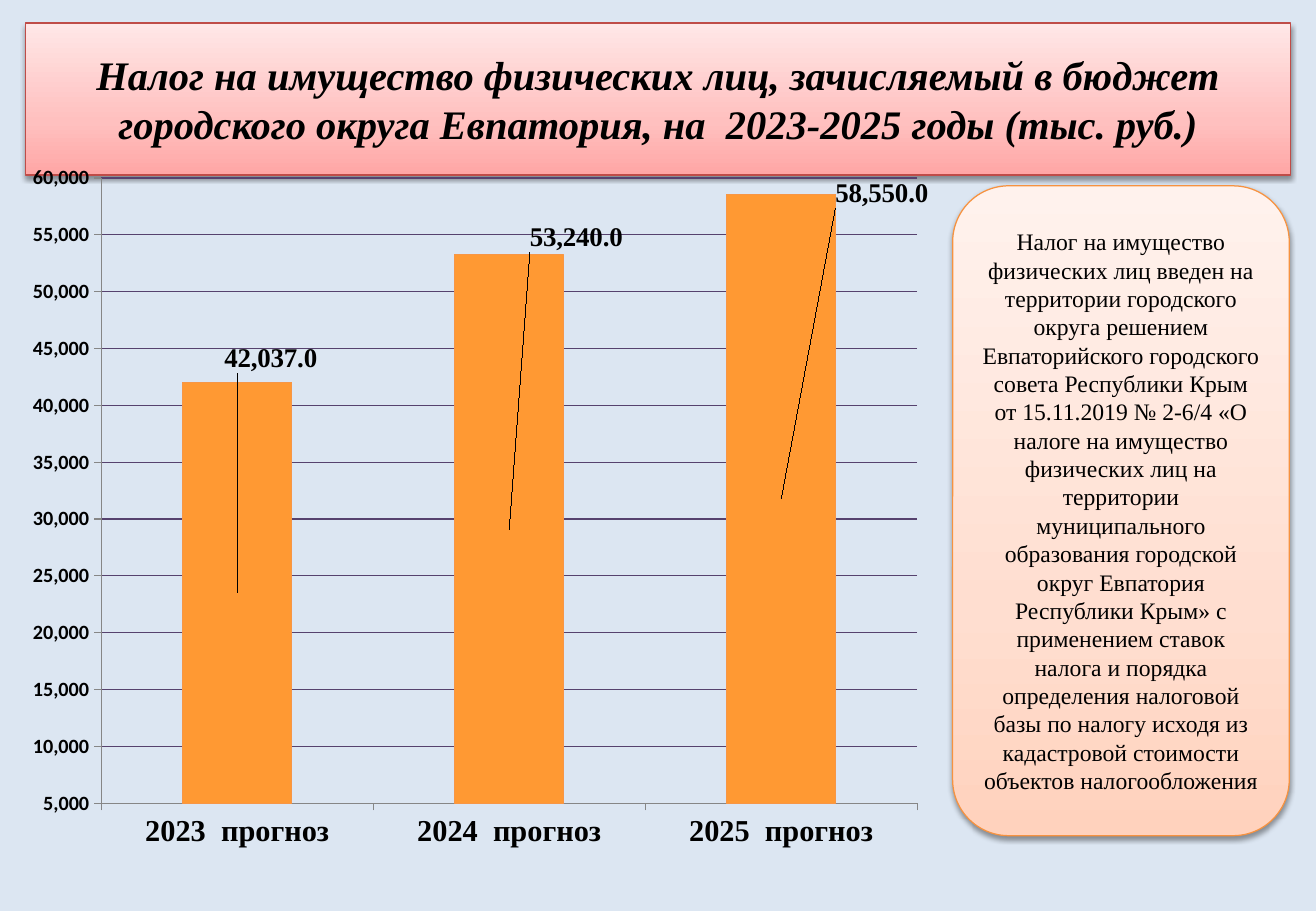
from copy import deepcopy

from lxml import etree
from pptx import Presentation
from pptx import util as u
from pptx.chart.data import CategoryChartData
from pptx.dml.color import RGBColor
from pptx.enum import chart as charts, shapes, text
from pptx.oxml import parse_xml
from pptx.oxml.ns import qn

BLACK = RGBColor(0, 0, 0)
BACKGROUND = RGBColor(0xDC, 0xE6, 0xF2)
ORANGE = RGBColor(0xFF, 0x99, 0x33)
BAR_EDGE = RGBColor(0xF7, 0x96, 0x46)
GRID = RGBColor(0x56, 0x42, 0x6E)
AXIS = RGBColor(0x86, 0x86, 0x86)
RED_EDGE = RGBColor(0xBF, 0x4C, 0x48)
ORANGE_EDGE = RGBColor(0xF6, 0x92, 0x40)
REDS = [RGBColor.from_string(c) for c in ("FFA6A5", "FFC0BF", "FFE7E7")]
PEACHES = [RGBColor.from_string(c) for c in ("FFD2BD", "FFDED0", "FFF2ED")]
STOPS = (0, 0.35, 1)
SERIF = "Times New Roman"
SANS = "Calibri"

TITLE = ("Налог на имущество физических лиц, зачисляемый в бюджет "
         "городского округа Евпатория, на  2023-2025 годы (тыс. руб.)")
NOTE = ("Налог на имущество физических лиц введен на территории городского округа "
        "решением Евпаторийского городского совета Республики Крым от 15.11.2019 "
        "№ 2-6/4 «О налоге на имущество физических лиц на территории муниципального "
        "образования городской округ Евпатория Республики Крым» с применением ставок "
        "налога и порядка определения налоговой базы по налогу исходя из кадастровой "
        "стоимости объектов налогообложения")
FORECAST = {"2023  прогноз": 42037, "2024  прогноз": 53240, "2025  прогноз": 58550}
LABEL_SHIFTS = [(0.03, -0.33), (0.06, -0.41), (0.09, -0.43)]
PLOT_BOX = (0.06, 0.03, 0.73, 0.88)

LEADER_LINES = (
    '<c:extLst xmlns:c="http://schemas.openxmlformats.org/drawingml/2006/chart">'
    '<c:ext uri="{CE6537A1-D6FC-4f65-9D91-7224C49458BB}" '
    'xmlns:c15="http://schemas.microsoft.com/office/drawing/2012/chart">'
    '<c15:showLeaderLines val="1"/></c:ext></c:extLst>')


def chart_layout(**settings):
    """Return a manual chart layout element."""
    layout = etree.Element(qn("c:layout"))
    manual = etree.SubElement(layout, qn("c:manualLayout"))
    for name, value in settings.items():
        etree.SubElement(manual, qn(f"c:{name}"), val=str(value))
    return layout


class TaxSlide:
    """Slide with a shared style and a method for each kind of element."""

    def __init__(self, presentation):
        self.slide = presentation.slides.add_slide(presentation.slide_layouts[5])
        fill = self.slide.background.fill
        fill.solid()
        fill.fore_color.rgb = BACKGROUND

    def style_font(self, font, size, name=SERIF, bold=False, italic=False):
        font.size, font.name = u.Pt(size), name
        font.bold, font.italic = bold, italic
        font.color.rgb = BLACK

    def style_panel(self, shape, words, colors, edge, size, emphasis=False):
        shape.fill.gradient()
        shape.fill.gradient_angle = 90
        stop_list = shape._element.find(".//" + qn("a:gsLst"))
        stop_list.append(deepcopy(stop_list[-1]))
        for stop, position, color in zip(shape.fill.gradient_stops, STOPS, colors):
            stop.position = position
            stop.color.rgb = color
        shape.line.color.rgb = edge
        shape.line.width = u.Pt(0.75)
        shape.shadow.inherit = False
        effects = shape._element.find(".//" + qn("a:effectLst"))
        shadow = etree.SubElement(effects, qn("a:outerShdw"), blurRad="40000",
                                  dist="20000", dir="5400000", rotWithShape="0")
        color = etree.SubElement(shadow, qn("a:srgbClr"), val="000000")
        etree.SubElement(color, qn("a:alpha"), val="38000")
        frame = shape.text_frame
        frame.text = words
        frame.word_wrap = True
        frame.auto_size = text.MSO_AUTO_SIZE.NONE
        frame.vertical_anchor = text.MSO_ANCHOR.MIDDLE
        paragraph = frame.paragraphs[0]
        paragraph.alignment = text.PP_ALIGN.CENTER
        self.style_font(paragraph.font, size, bold=emphasis, italic=emphasis)

    def title(self, words, left, top, width, height):
        shape = self.slide.shapes.title
        shape.left, shape.top = u.Inches(left), u.Inches(top)
        shape.width, shape.height = u.Inches(width), u.Inches(height)
        self.style_panel(shape, words, REDS, RED_EDGE, 24, emphasis=True)

    def note(self, words, *box):
        shape = self.slide.shapes.add_shape(
            shapes.MSO_SHAPE.ROUNDED_RECTANGLE, *map(u.Inches, box))
        self.style_panel(shape, words, PEACHES, ORANGE_EDGE, 14)

    def column_chart(self, values, *box):
        data = CategoryChartData(number_format="#,##0.0")
        data.categories = list(values)
        data.add_series("Series 1", list(values.values()))
        chart = self.slide.shapes.add_chart(
            charts.XL_CHART_TYPE.COLUMN_STACKED, *map(u.Inches, box), data).chart
        chart.has_legend = chart.has_title = False
        self.style_font(chart.font, 18, SANS)
        plot = chart.plots[0]
        plot.gap_width, plot.overlap, plot.vary_by_categories = 150, 100, False
        self.style_axes(chart)
        self.style_columns(plot.series[0])
        plot_area = chart._chartSpace.find(".//" + qn("c:plotArea"))
        for old in plot_area.findall(qn("c:layout")):
            plot_area.remove(old)
        x, y, w, h = PLOT_BOX
        plot_area.insert(0, chart_layout(layoutTarget="inner", xMode="edge",
                                         yMode="edge", x=x, y=y, w=w, h=h))

    def style_axes(self, chart):
        categories, amounts = chart.category_axis, chart.value_axis
        self.style_font(categories.tick_labels.font, 18, bold=True)
        self.style_font(amounts.tick_labels.font, 12, SANS, bold=True)
        for axis in (categories, amounts):
            axis.major_tick_mark = charts.XL_TICK_MARK.OUTSIDE
            axis.format.line.color.rgb = AXIS
            axis.format.line.width = u.Pt(0.75)
        amounts.minimum_scale, amounts.maximum_scale = 5000, 60000
        amounts.major_unit = 5000
        amounts.tick_labels.number_format = "#,##0"
        amounts.tick_labels.number_format_is_linked = False
        amounts.has_major_gridlines = True
        amounts.major_gridlines.format.line.color.rgb = GRID
        amounts.major_gridlines.format.line.width = u.Pt(0.75)

    def style_columns(self, series):
        series.format.fill.solid()
        series.format.fill.fore_color.rgb = ORANGE
        series.format.line.color.rgb = BAR_EDGE
        series.format.line.width = u.Pt(0.75)
        labels = series.data_labels
        labels.show_value = True
        labels.number_format = "#,##0.0"
        labels.number_format_is_linked = False
        self.style_font(labels.font, 16, bold=True)
        for index in range(len(LABEL_SHIFTS)):
            self.style_font(series.points[index].data_label.font, 16, bold=True)
        label_list = series._element.find(qn("c:dLbls"))
        for label, (x, y) in zip(label_list.findall(qn("c:dLbl")), LABEL_SHIFTS):
            label.insert(1, chart_layout(x=x, y=y))
            label.insert(2, deepcopy(label_list.find(qn("c:numFmt"))))
            for position in label.findall(qn("c:dLblPos")):
                label.remove(position)
        label_list.append(parse_xml(LEADER_LINES))


def main():
    presentation = Presentation()
    presentation.slide_width = u.Inches(10.83)
    presentation.slide_height = u.Inches(7.5)
    tax_slide = TaxSlide(presentation)
    tax_slide.title(TITLE, 0.21, 0.19, 10.41, 1.25)
    tax_slide.column_chart(FORECAST, 0.27, 1.29, 9.21, 5.85)
    tax_slide.note(NOTE, 7.84, 1.53, 2.77, 5.35)
    presentation.save("out.pptx")


if __name__ == "__main__":
    main()
